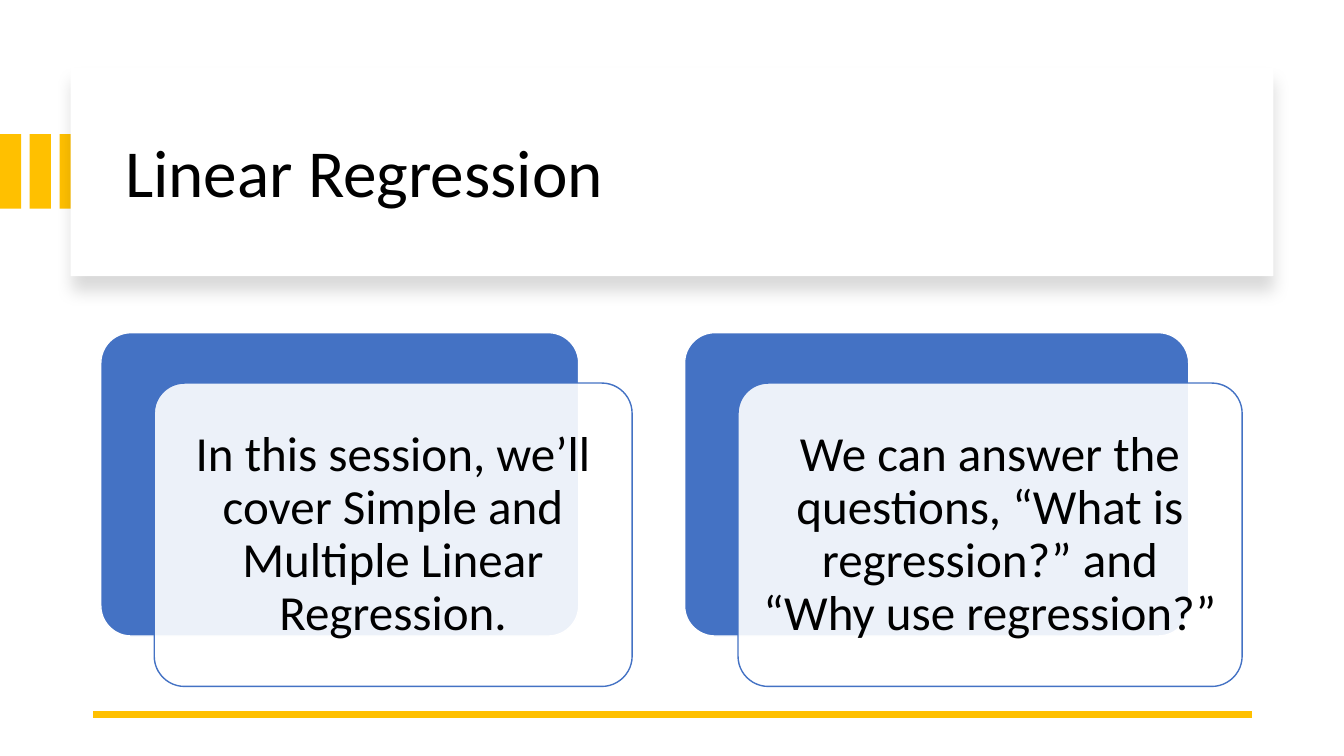
from lxml.etree import SubElement
from pptx import Presentation
from pptx.dml.color import RGBColor
from pptx.enum.shapes import MSO_CONNECTOR, MSO_SHAPE
from pptx.enum.text import MSO_ANCHOR, PP_ALIGN
from pptx.oxml.ns import qn
from pptx.util import Inches, Pt

COLORS = {"gold": "FFC000", "blue": "4472C4", "white": "FFFFFF", "black": "000000"}
CARDS = [
    (1, 4.74, "In this session, we’ll cover Simple and Multiple Linear Regression."),
    (6.79, 5, "We can answer the questions, “What is regression?” and “Why use regression?”"),
]
CARD_TOP, CARD_HEIGHT = 3.3, 3.01
FRONT_SHIFT_X, FRONT_SHIFT_Y = 0.53, 0.5


def color(name):
    return RGBColor.from_string(COLORS[name])


def add_box(page, kind, left, top, width, height, fill, line=None):
    box = page.shapes.add_shape(
        kind, Inches(left), Inches(top), Inches(width), Inches(height))
    box.shadow.inherit = False
    box.fill.solid()
    box.fill.fore_color.rgb = color(fill)
    if line:
        box.line.color.rgb = color(line)
        box.line.width = Pt(1)
    else:
        box.line.fill.background()
    return box


def add_rounded_box(page, left, top, width, fill, line):
    box = add_box(page, MSO_SHAPE.ROUNDED_RECTANGLE, left, top, width, CARD_HEIGHT, fill, line)
    box.adjustments[0] = 0.1
    return box


def set_opacity(color_element, percent):
    SubElement(color_element, qn("a:alpha"), val=str(percent * 1000))


def add_soft_shadow(box):
    """Cast a faint blurred shadow straight down."""
    effects = box.element.spPr.find(qn("a:effectLst"))
    shadow = SubElement(
        effects, qn("a:outerShdw"), blurRad=str(Pt(11)), dist=str(Pt(10)),
        dir=str(90 * 60000), algn="t", rotWithShape="0")
    set_opacity(SubElement(shadow, qn("a:srgbClr"), val=COLORS["black"]), 15)


def write_text(box, text, size, align, inset_x, inset_y):
    frame = box.text_frame
    frame_format = {
        "word_wrap": True, "vertical_anchor": MSO_ANCHOR.MIDDLE,
        "margin_left": Inches(inset_x), "margin_right": Inches(inset_x),
        "margin_top": Inches(inset_y), "margin_bottom": Inches(inset_y),
    }
    for name, value in frame_format.items():
        setattr(frame, name, value)
    para = frame.paragraphs[0]
    para.alignment = align
    para.line_spacing = 0.9
    span = para.add_run()
    span.text = text
    for name, value in {"name": "Calibri", "size": Pt(size), "bold": False}.items():
        setattr(span.font, name, value)
    span.font.color.rgb = color("black")


def add_header(page, text):
    for index in range(3):
        add_box(page, MSO_SHAPE.RECTANGLE, index * 0.295, 1.33, 0.21, 0.74, "gold")
    panel = add_box(page, MSO_SHAPE.RECTANGLE, 0.7, 0.67, 11.93, 2.07, "white")
    add_soft_shadow(panel)

    title = page.shapes.title
    place = {"left": 1.14, "top": 0.89, "width": 11.13, "height": 1.7}
    for name, value in place.items():
        setattr(title, name, Inches(value))
    write_text(title, text, 48, PP_ALIGN.LEFT, 0.1, 0.05)
    panel.element.addnext(title.element)


def add_base_line(page):
    line = page.shapes.add_connector(
        MSO_CONNECTOR.STRAIGHT, Inches(12.42), Inches(7.09), Inches(0.92), Inches(7.09))
    line.line.color.rgb = color("gold")
    line.line.width = Pt(4.5)
    SubElement(line.element.spPr, qn("a:effectLst"))


def add_card(page, left, width, text):
    """Add a blue box with a translucent text box shifted over it."""
    add_rounded_box(page, left, CARD_TOP, width, "blue", "white")
    front = add_rounded_box(
        page, left + FRONT_SHIFT_X, CARD_TOP + FRONT_SHIFT_Y, width, "white", "blue")
    fill = front.element.spPr.find(qn("a:solidFill"))
    set_opacity(fill.find(qn("a:srgbClr")), 90)
    write_text(front, text, 35, PP_ALIGN.CENTER, 0.15, 0.15)


def main():
    deck = Presentation()
    deck.slide_width, deck.slide_height = Inches(13.33), Inches(7.5)
    page = deck.slides.add_slide(deck.slide_layouts[5])
    add_header(page, "Linear Regression")
    add_base_line(page)
    for left, width, text in CARDS:
        add_card(page, left, width, text)
    deck.save("out.pptx")


if __name__ == "__main__":
    main()
